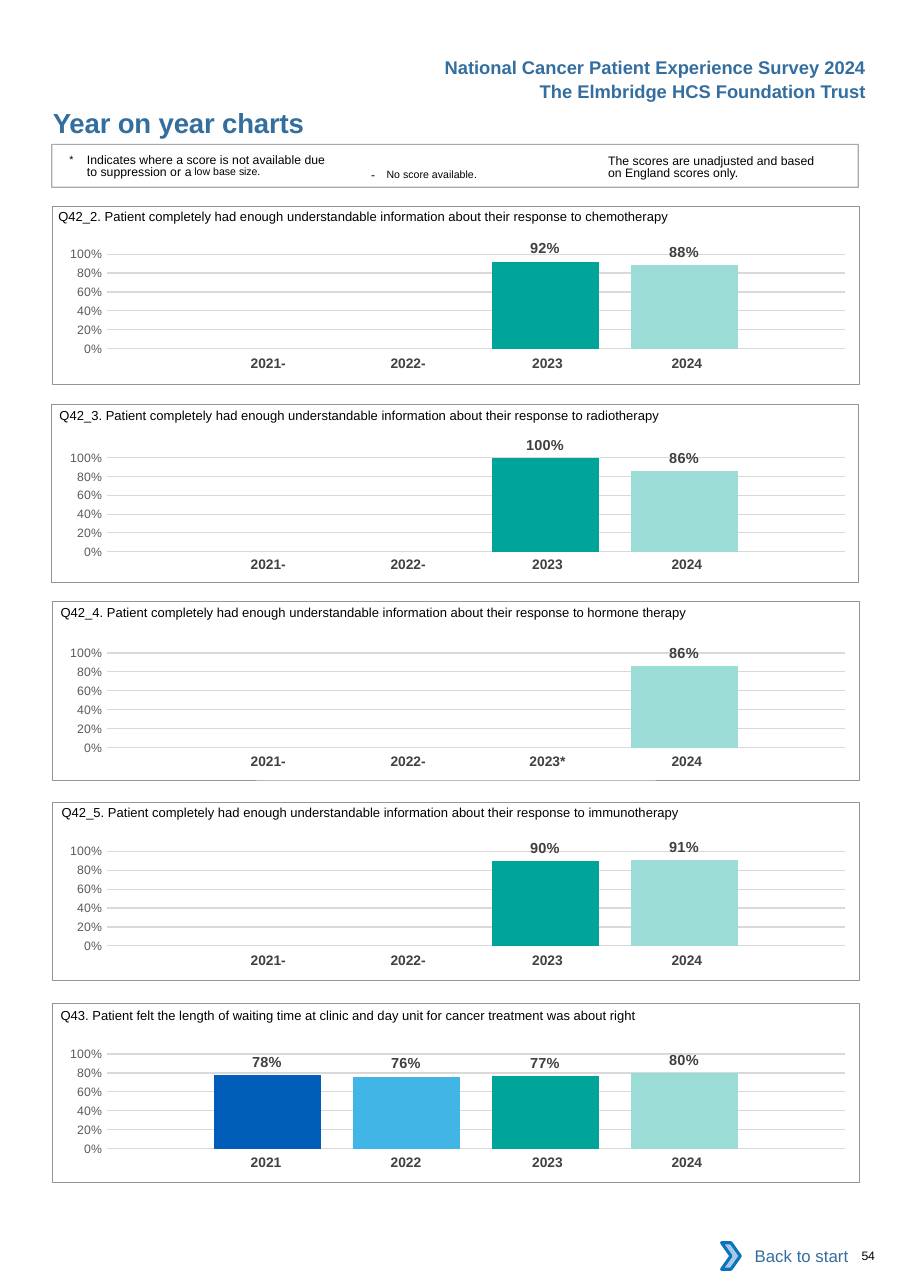
import dataclasses
import typing

import pptx
import pptx.chart.data
import pptx.dml.color
import pptx.enum.chart
import pptx.enum.shapes
import pptx.enum.text
import pptx.oxml
import pptx.oxml.ns
import pptx.util

Inches = pptx.util.Inches
Pt = pptx.util.Pt
ALIGN = pptx.enum.text.PP_ALIGN
ANCHOR = pptx.enum.text.MSO_ANCHOR
SHAPE = pptx.enum.shapes.MSO_SHAPE
BLUE, GREY, BLACK = "336E9F", "939598", "000000"
YEAR_COLORS = {"2021": "005EB8", "2022": "41B6E6", "2023": "00A499", "2024": "9CDCD7"}
PANEL_WIDTH, PANEL_HEIGHT = 7.32, 1.62


@dataclasses.dataclass
class Span:
    text: str
    size: float = 8
    spacing: float = 0
    baseline: int = 0


@dataclasses.dataclass
class TextBlock:
    at: tuple[float, float, float, float]
    spans: list[Span]
    color: str = BLACK
    bold: bool = False
    insets: tuple[float, float, float, float] = (0, 0, 0, 0)
    wrap: bool = True
    hanging: float = 0
    paragraph: dict[str, typing.Any] = dataclasses.field(default_factory=dict)


@dataclasses.dataclass
class Panel:
    question: str
    caption_at: tuple[float, float]
    frame_at: tuple[float, float]
    chart_top: float
    table_top: float
    marks: tuple[str, str, str, str]
    scores: tuple[float | None, ...]


def rgb(color: str) -> pptx.dml.color.RGBColor:
    return pptx.dml.color.RGBColor.from_string(color)


def apply(target: typing.Any, values: dict[str, typing.Any]) -> None:
    for name, value in values.items():
        setattr(target, name, value)


def style_font(font: typing.Any, size: float, color: str, bold: bool = False, name: str = "Arial") -> None:
    apply(font, {"size": Pt(size), "bold": bold, "name": name})
    font.color.rgb = rgb(color)


def set_insets(target: typing.Any, insets: tuple[float, ...]) -> None:
    sides = ("margin_left", "margin_top", "margin_right", "margin_bottom")
    apply(target, {side: Inches(inset) for side, inset in zip(sides, insets)})


def add_text(shapes: typing.Any, block: TextBlock) -> None:
    box = shapes.add_textbox(*map(Inches, block.at))
    frame = box.text_frame
    apply(frame, {"word_wrap": block.wrap, "auto_size": pptx.enum.text.MSO_AUTO_SIZE.SHAPE_TO_FIT_TEXT})
    set_insets(frame, block.insets)
    para = frame.paragraphs[0]
    apply(para, block.paragraph)
    if block.hanging:
        properties = para._p.get_or_add_pPr()
        properties.set("marL", str(Inches(block.hanging)))
        properties.set("indent", str(-Inches(block.hanging)))
    for span in block.spans:
        run = para.add_run()
        run.text = span.text
        style_font(run.font, span.size, block.color, block.bold)
        # Letter spacing and raised text
        properties = run._r.get_or_add_rPr()
        properties.set("spc", str(round(span.spacing * 100)))
        properties.set("baseline", str(span.baseline * 1000))


def add_outline(shapes: typing.Any, kind: typing.Any, at: tuple[float, ...], line: str | None = None,
                width: float = 0.5, fill: str | None = None) -> typing.Any:
    shape = shapes.add_shape(kind, *map(Inches, at))
    shape.shadow.inherit = False
    if fill:
        shape.fill.solid()
        shape.fill.fore_color.rgb = rgb(fill)
    else:
        shape.fill.background()
    if line:
        shape.line.color.rgb = rgb(line)
        shape.line.width = Pt(width)
    else:
        shape.line.fill.background()
    return shape


def add_years(shapes: typing.Any, panel: Panel) -> None:
    widths, right_insets = (1.27, 1.27, 1.34, 1.27), (0, 0, 0.04, 0.12)
    table = shapes.add_table(1, 4, Inches(1.73), Inches(panel.table_top), Inches(sum(widths)), Inches(0.27)).table
    apply(table, {"first_row": False, "horz_banding": False})
    for index, (year, mark) in enumerate(zip(YEAR_COLORS, panel.marks)):
        table.columns[index].width = Inches(widths[index])
        cell = table.cell(0, index)
        cell.fill.background()
        set_insets(cell, (0.14 if mark == "-" else 0.1, 0.05, right_insets[index], 0.05))
        para = cell.text_frame.paragraphs[0]
        para.alignment = ALIGN.CENTER
        run = para.add_run()
        run.text = year + mark
        style_font(run.font, 9, "414042", True)


def add_scores(shapes: typing.Any, panel: Panel) -> None:
    data = pptx.chart.data.CategoryChartData(number_format="0%")
    data.categories = ["1"]
    for number, score in enumerate(panel.scores, 1):
        data.add_series(f"Series {number}", [score])
    at = map(Inches, (0.39, panel.chart_top, PANEL_WIDTH, 1.29))
    chart = shapes.add_chart(pptx.enum.chart.XL_CHART_TYPE.COLUMN_CLUSTERED, *at, data).chart
    apply(chart, {"has_legend": False, "has_title": False})
    style_font(chart.font, 10, BLACK, name="Calibri")
    chart.category_axis.visible = False

    axis = chart.value_axis
    apply(axis, {"minimum_scale": 0, "maximum_scale": 1, "major_unit": 0.2, "has_major_gridlines": True,
                 "major_tick_mark": pptx.enum.chart.XL_TICK_MARK.NONE})
    apply(axis.tick_labels, {"number_format": "0%", "number_format_is_linked": False})
    style_font(axis.tick_labels.font, 8, "595959")
    axis.format.line.fill.background()
    axis.major_gridlines.format.line.color.rgb = rgb("D9D9D9")
    axis.major_gridlines.format.line.width = Pt(0.75)

    plot = chart.plots[0]
    apply(plot, {"gap_width": 200, "overlap": -30, "vary_by_categories": False})
    for series, color in zip(plot.series, YEAR_COLORS.values()):
        series.format.fill.solid()
        series.format.fill.fore_color.rgb = rgb(color)
        labels = series.data_labels
        apply(labels, {"show_value": True, "number_format": "0%", "number_format_is_linked": False,
                       "position": pptx.enum.chart.XL_LABEL_POSITION.OUTSIDE_END})
        style_font(labels.font, 9.5, "404040", True)

    # Fixed inner plot area
    settings = {"layoutTarget": "inner", "xMode": "edge", "yMode": "edge",
                "x": 0.079, "y": 0.145, "w": 0.915, "h": 0.666}
    entries = "".join(f'<c:{name} val="{value}"/>' for name, value in settings.items())
    layout = pptx.oxml.parse_xml(f'<c:layout {pptx.oxml.ns.nsdecls("c")}>'
                                 f"<c:manualLayout>{entries}</c:manualLayout></c:layout>")
    area = chart._chartSpace.chart.plotArea
    for existing in area.findall(pptx.oxml.ns.qn("c:layout")):
        area.remove(existing)
    area.insert(0, layout)


RESPONSE = "Patient completely had enough understandable information about their response to "
NO_EARLY = ("-", "-", "", "")
PANELS = [
    Panel(f"Q42_2. {RESPONSE}chemotherapy", (0.53, 1.8), (0.48, 1.87), 2.12, 3.18,
          NO_EARLY, (None, None, 0.92, 0.88)),
    Panel(f"Q42_3. {RESPONSE}radiotherapy", (0.54, 3.61), (0.47, 3.67), 3.96, 5.01,
          NO_EARLY, (None, None, 1, 0.86)),
    Panel(f"Q42_4. {RESPONSE}hormone therapy", (0.55, 5.4), (0.48, 5.46), 5.74, 6.79,
          ("-", "-", "*", ""), (None, None, None, 0.86)),
    Panel(f"Q42_5. {RESPONSE}immunotherapy", (0.56, 7.21), (0.48, 7.28), 7.54, 8.6,
          NO_EARLY, (None, None, 0.9, 0.91)),
    Panel("Q43. Patient felt the length of waiting time at clinic and day unit for cancer treatment was about right",
          (0.55, 9.05), (0.48, 9.11), 9.38, 10.43, ("", "", "", ""), (0.78, 0.76, 0.77, 0.8)),
]
HEADER = {"color": BLUE, "bold": True, "insets": (0.1, 0.05, 0.1, 0.05), "wrap": False,
          "paragraph": {"alignment": ALIGN.RIGHT}}
NOTE = {"line_spacing": Pt(8.1), "space_before": Pt(2.5)}
HEADINGS = [
    TextBlock((3.92, 0.46, 4.04, 0.3), [Span("National Cancer Patient Experience Survey 2024", 12)], **HEADER),
    TextBlock((4.69, 0.68, 3.27, 0.3), [Span("The Elmbridge HCS Foundation Trust", 12)], **HEADER),
    TextBlock((0.48, 0.96, 4.5, 0.3), [Span("Year on year charts", 18, -0.1)], BLUE, True,
              paragraph={"space_before": Pt(4.1)}),
    TextBlock((7.82, 11.33, 0.41, 0.13), [Span("54", 8, -0.2)], paragraph={"space_before": Pt(0.2)}),
]
LEGEND = [
    TextBlock((5.52, 1.38, 1.98, 0.27), [Span("The scores are unadjusted and based on England scores only.")],
              insets=(0, 0.03, 0, 0), paragraph=NOTE),
    TextBlock((3.27, 1.41, 1.83, 0.24), [Span("- ", 8, 2.6), Span("No score available", 12, 0, 3), Span(".", 12, -0.1, 3)],
              insets=(0.1, 0.05, 0.1, 0.05), paragraph={"space_before": Pt(2.1)}),
    TextBlock((0.63, 1.38, 2.4, 0.26),
              [Span("*\t", 12, 0, 3), Span("Indicates where a score is not available due to suppression or "),
               Span("a ", 8, -0.5), Span("low base", 12, 0, 7), Span(" size.", 12, -0.1, 7)],
              insets=(0, 0.03, 0, 0), hanging=0.16, paragraph=NOTE),
]


def main() -> None:
    deck = pptx.Presentation()
    apply(deck, {"slide_width": Inches(8.26), "slide_height": Inches(11.69)})
    page = deck.slides.add_slide(deck.slide_layouts[6])

    # Headings and page number
    for block in HEADINGS:
        add_text(page.shapes, block)

    # Question panels
    for panel in PANELS:
        add_text(page.shapes, TextBlock((*panel.caption_at, 7.24, 0.24), [Span(panel.question, 8.5)],
                                        insets=(0, 0.09, 0, 0), paragraph={"space_before": Pt(6.8)}))
        add_years(page.shapes, panel)
        add_scores(page.shapes, panel)
        add_outline(page.shapes, SHAPE.RECTANGLE, (*panel.frame_at, PANEL_WIDTH, PANEL_HEIGHT), GREY)

    # Legend
    legend = page.shapes.add_group_shape().shapes
    for block in LEGEND:
        add_text(legend, block)
    border = add_outline(legend, SHAPE.RECTANGLE, (0.47, 1.31, PANEL_WIDTH, 0.39), GREY, 0.75)
    color = border.line._ln.find(".//" + pptx.oxml.ns.qn("a:srgbClr"))
    color.append(pptx.oxml.parse_xml(f'<a:alpha {pptx.oxml.ns.nsdecls("a")} val="80000"/>'))

    # Return button
    button = page.shapes.add_group_shape().shapes
    label = add_outline(button, SHAPE.RECTANGLE, (6.62, 11.19, 1.18, 0.42), fill="FFFFFF")
    label.text_frame.vertical_anchor = ANCHOR.MIDDLE
    para = label.text_frame.paragraphs[0]
    para.alignment = ALIGN.RIGHT
    run = para.add_run()
    run.text = "Back to start"
    style_font(run.font, 11, BLUE)
    add_outline(button, SHAPE.CHEVRON, (6.55, 11.28, 0.17, 0.24), "0A74BB", 2, "A8C7E9")

    deck.save("out.pptx")


if __name__ == "__main__":
    main()
